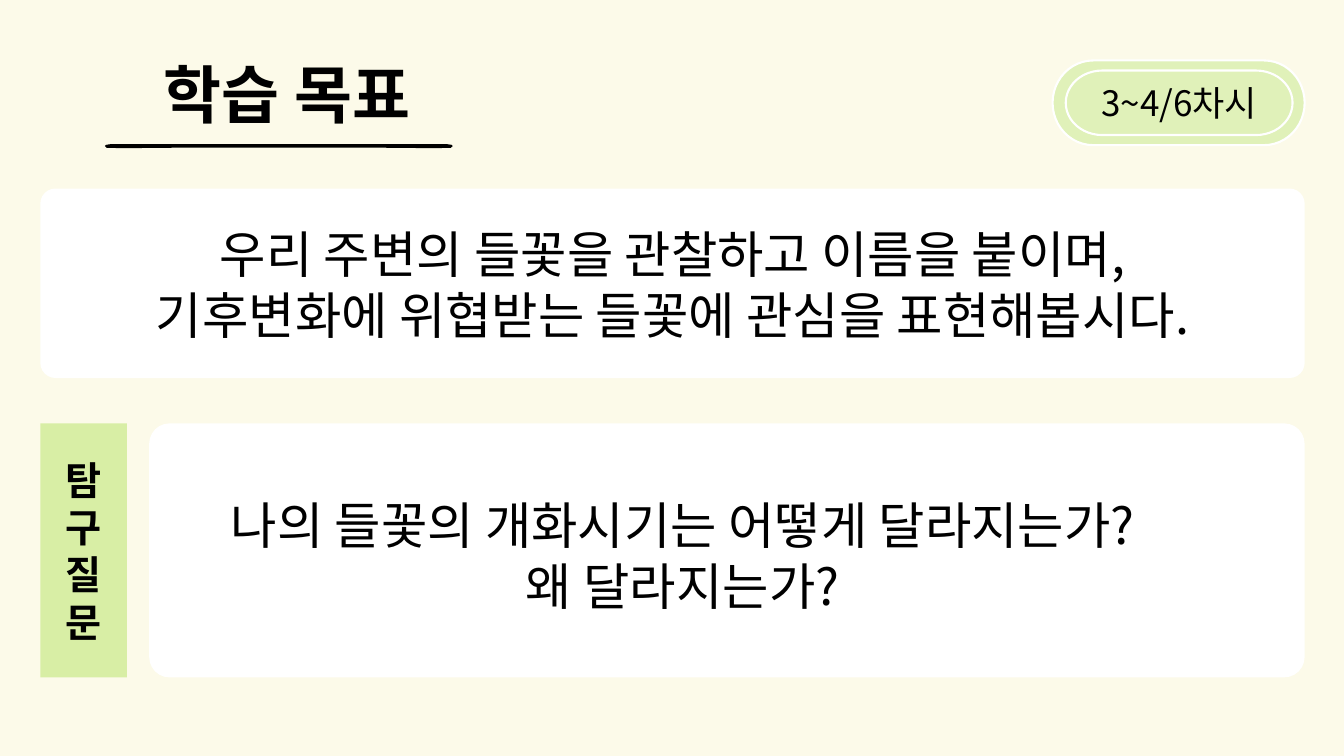
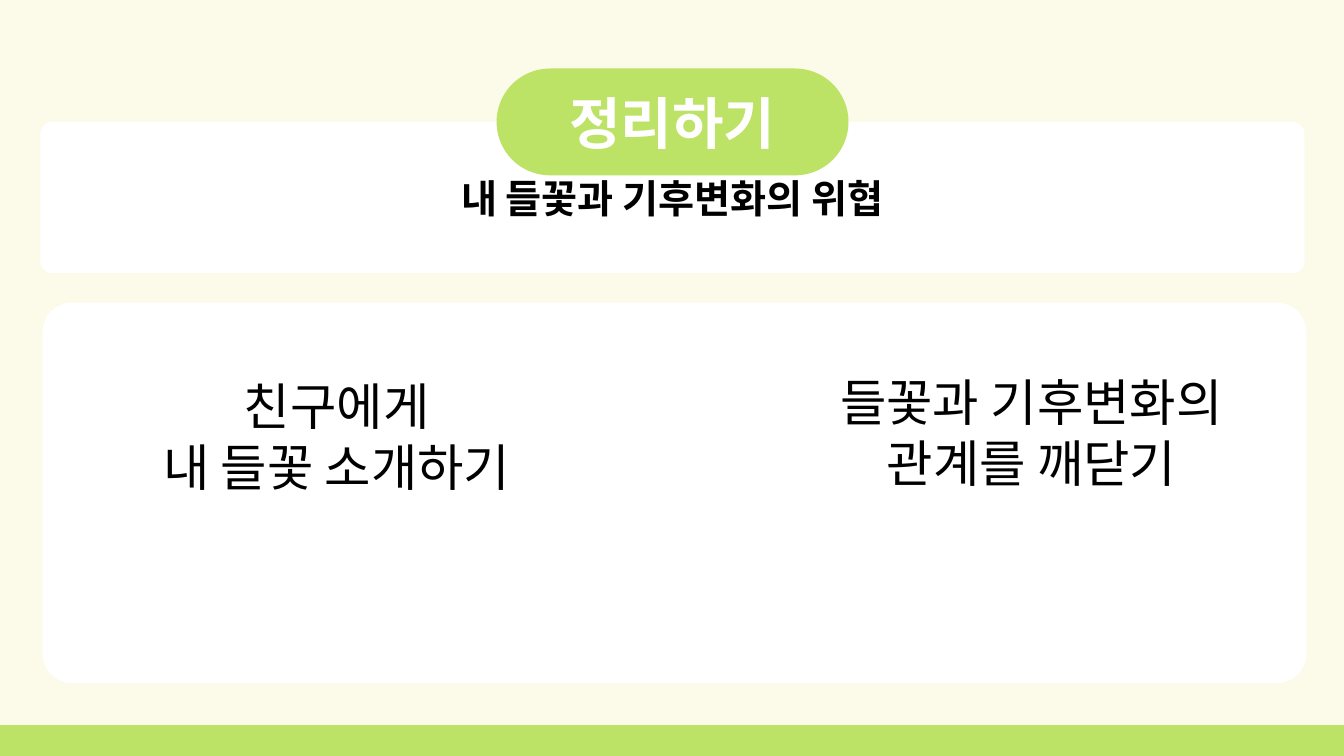
from lxml import etree
from pptx import Presentation
from pptx.dml.color import RGBColor
from pptx.enum.shapes import MSO_SHAPE
from pptx.enum.text import MSO_ANCHOR, MSO_AUTO_SIZE, PP_ALIGN
from pptx.oxml.ns import qn
from pptx.util import Inches, Pt

RECT, ROUND = MSO_SHAPE.RECTANGLE, MSO_SHAPE.ROUNDED_RECTANGLE
TERMINATOR, PROCESS = MSO_SHAPE.FLOWCHART_TERMINATOR, MSO_SHAPE.FLOWCHART_PROCESS
TOP, MIDDLE = MSO_ANCHOR.TOP, MSO_ANCHOR.MIDDLE
CENTER, NO_FIT = PP_ALIGN.CENTER, MSO_AUTO_SIZE.NONE

FONT = "Noto Sans CJK KR"
LINE_PITCH = 1.21  # line height as a multiple of the text size
COLORS = {
    "paper": "FCFAE9",
    "card": "FFFFFF",
    "ink": "000000",
    "leaf": "BCE266",
    "label": "D8EEA5",
    "badge": "E0F1B9",
}
CORNER = 0.08
SLIDE_W, SLIDE_H = 13.33, 7.5
MARGIN, CARD_W = 0.4, 12.54


def rgb(name):
    return RGBColor.from_string(COLORS[name])


def write(sp, lines, size, bold=False, color="ink", anchor=MIDDLE):
    """Set centred text, one paragraph for each line."""
    tf = sp.text_frame
    tf.text = "\n".join(lines)
    tf.word_wrap = True
    tf.auto_size = NO_FIT
    tf.vertical_anchor = anchor
    for p in tf.paragraphs:
        p.alignment = CENTER
        p.line_spacing = Pt(size * LINE_PITCH)
        p.space_before = Pt(0)
        for r in p.runs:
            r.font.name = FONT
            r.font.size = Pt(size)
            r.font.bold = bold
            r.font.color.rgb = rgb(color)
            ea = etree.SubElement(r.font._element, qn("a:ea"))
            ea.set("typeface", FONT)


def paint(sp, fill, line=None):
    sp.shadow.inherit = False
    sp.fill.solid()
    sp.fill.fore_color.rgb = rgb(fill)
    if line:
        sp.line.color.rgb = rgb(line)
        sp.line.width = Pt(1.5)
    else:
        sp.line.fill.background()


def add_box(shapes, kind, box, fill, line=None, corner=None):
    sp = shapes.add_shape(kind, *map(Inches, box))
    paint(sp, fill, line)
    if corner is not None:
        sp.adjustments[0] = corner
    return sp


def add_card(shapes, box):
    return add_box(shapes, ROUND, box, "card", corner=CORNER)


def add_text(shapes, box, lines, size):
    write(shapes.add_textbox(*map(Inches, box)), lines, size, anchor=TOP)


def place_title(s, box, text, size, color="ink"):
    """Move the title placeholder to the box and bring it to the front."""
    sp = s.shapes.title
    sp.left, sp.top, sp.width, sp.height = map(Inches, box)
    write(sp, [text], size, bold=True, color=color)
    sp.element.getparent().append(sp.element)


def add_underline(shapes, box):
    """Thin stroke with blunt, rounded ends."""
    x, y, w, h = box
    half = [(0.2, 0.2), (0.06, 0.2), (0.01, 0.35), (0, 0.6), (0.02, 0.95), (0.2, 1), (0.8, 0.9)]
    outline = half + [(w - dx, dy) for dx, dy in reversed(half)]
    points = [(Inches(x + dx), Inches(y + dy * h)) for dx, dy in outline]
    builder = shapes.build_freeform(*points[0])
    builder.add_line_segments(points[1:], close=True)
    paint(builder.convert_to_shape(), "ink")


def add_badge(shapes, box, text):
    """Double-outlined pill for the lesson number."""
    x, y, w, h = box
    group = shapes.add_group_shape().shapes
    add_box(group, TERMINATOR, box, "badge", "card")
    inner = (x + 0.13, y + 0.1, w - 0.25, h - 0.2)
    write(add_box(group, TERMINATOR, inner, "badge", "card"), [text], 25)


def add_question(shapes, box, label, lines):
    """Upright label beside a card with the question."""
    x, y, w, h = box
    label_w, gap = 0.86, 0.22
    card_x = x + label_w + gap
    group = shapes.add_group_shape().shapes
    add_card(group, (card_x, y, w - label_w - gap, h))
    write(add_box(group, RECT, (x, y, label_w, h), "label"), [label], 28, bold=True)
    add_text(shapes, (x + 0.31, y + 0.65, w - 0.42, 1.3), lines, 36)


def add_heading(s, box, title, subtitle):
    """Card with the title pill over its top edge."""
    x, y, w, h = box
    write(add_card(s.shapes, box), [subtitle], 28, bold=True)
    pill_w, pill_h = 3.49, 1.06
    pill = (x + (w - pill_w) / 2, y - pill_h / 2, pill_w, pill_h)
    add_box(s.shapes, ROUND, pill, "leaf", corner=0.5)
    place_title(s, pill, title, 40, "card")


def add_pair(shapes, box, left, right):
    """Card with a text block at each side."""
    x, y, w, h = box
    add_card(shapes, box)
    text_w = 5.46
    add_text(shapes, (x + 0.19, y + 0.67, text_w, 1.3), left, 36)
    add_text(shapes, (x + w - text_w, y + 0.63, text_w, 1.3), right, 36)


def build_goal(s):
    place_title(s, (0.47, 0.57, 4.75, 0.7), "학습 목표", 45)
    add_underline(s.shapes, (1.04, 1.42, 3.45, 0.05))
    goal = add_card(s.shapes, (MARGIN, 1.87, CARD_W, 1.88))
    write(goal, ["우리 주변의 들꽃을 관찰하고 이름을 붙이며,",
                 "기후변화에 위협받는 들꽃에 관심을 표현해봅시다."], 36)
    add_badge(s.shapes, (10.44, 0.6, 2.5, 0.84), "3~4/6차시")
    add_question(s.shapes, (MARGIN, 4.2, CARD_W, 2.52), "탐구질문",
                 ["나의 들꽃의 개화시기는 어떻게 달라지는가?", "왜 달라지는가?"])


def build_summary(s):
    footer_h = 0.31
    add_box(s.shapes, PROCESS, (0, SLIDE_H - footer_h, SLIDE_W, footer_h), "leaf")
    add_heading(s, (MARGIN, 1.21, CARD_W, 1.5), "정리하기", "내 들꽃과 기후변화의 위협")
    add_pair(s.shapes, (0.42, 3, CARD_W, 3.78),
             ["친구에게", "내 들꽃 소개하기"],
             ["들꽃과 기후변화의", "관계를 깨닫기"])


def main():
    prs = Presentation()
    prs.slide_width, prs.slide_height = Inches(SLIDE_W), Inches(SLIDE_H)
    # Shared background
    fill = prs.slide_master.background.fill
    fill.solid()
    fill.fore_color.rgb = rgb("paper")
    title_only = prs.slide_layouts[5]
    for build in (build_goal, build_summary):
        build(prs.slides.add_slide(title_only))
    prs.save("out.pptx")


if __name__ == "__main__":
    main()
